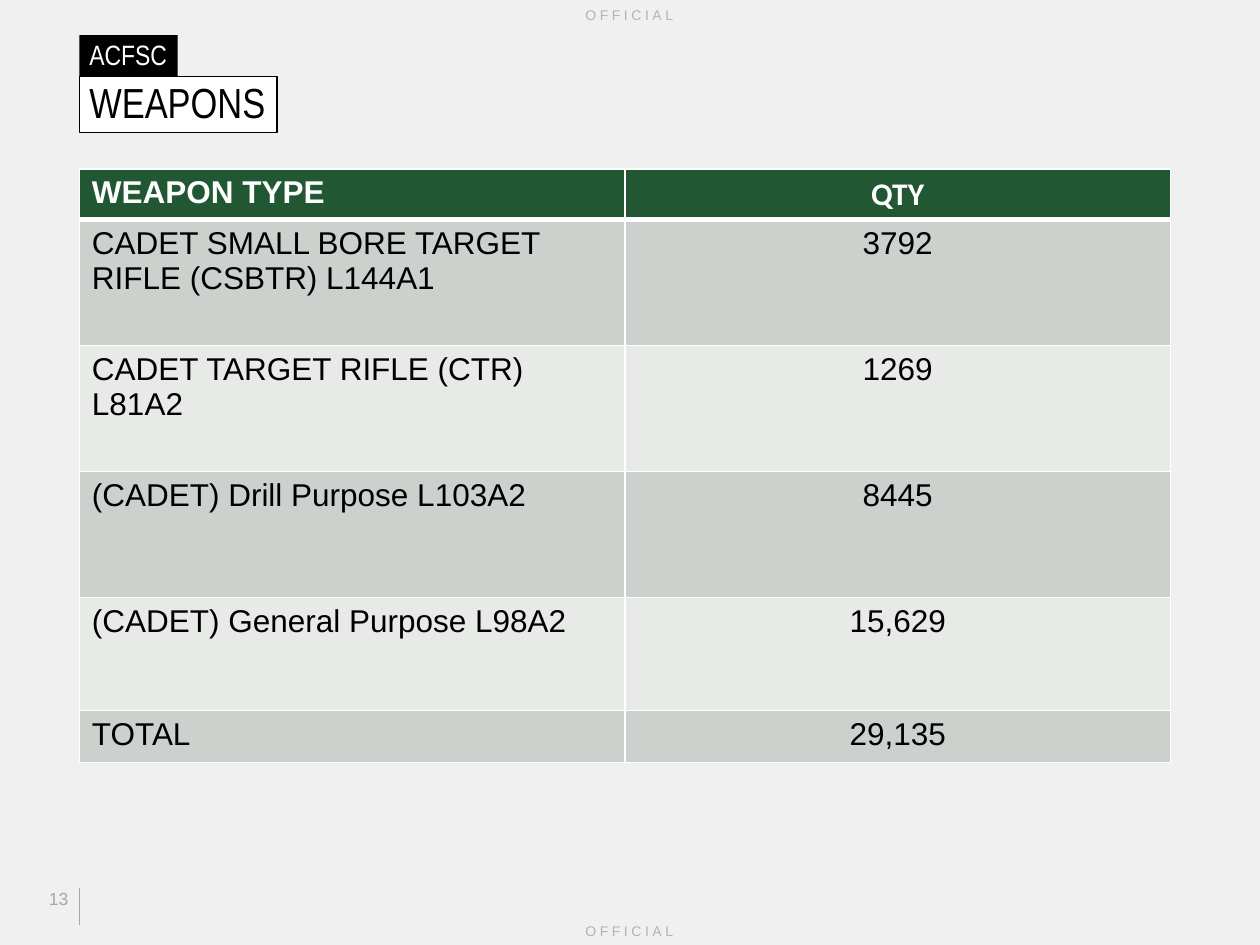
from lxml import etree
from pptx import Presentation
from pptx.dml.color import RGBColor
from pptx.enum import shapes, text
from pptx.oxml.ns import qn
from pptx.util import Inches, Pt

# Content
MARKING = "OFFICIAL"
HEADING, SUBHEADING, PAGE_NUMBER = "ACFSC", "WEAPONS", "13"
ROWS = [
    ("WEAPON TYPE", "QTY"),
    ("CADET SMALL BORE TARGET RIFLE (CSBTR) L144A1", "3792"),
    ("CADET TARGET RIFLE (CTR) L81A2", "1269"),
    ("(CADET) Drill Purpose L103A2", "8445"),
    ("(CADET) General Purpose L98A2", "15,629"),
    ("TOTAL", "29,135"),
]
ROW_HEIGHTS = [0.4, 1, 1, 1, 0.9, 0.41]

# Style and grid
PAPER = RGBColor(0xF0, 0xF0, 0xF0)
BLACK = RGBColor(0, 0, 0)
WHITE = RGBColor(255, 255, 255)
GREEN = RGBColor(0x21, 0x57, 0x32)
BANDS = [RGBColor(0xE8, 0xEA, 0xE8), RGBColor(0xCD, 0xD1, 0xCE)]
MARKING_GREY = RGBColor(0xB3, 0xB3, 0xB3)
FOOTER_GREY = RGBColor(0xA8, 0xA9, 0x9E)
WIDTH, HEIGHT = 10, 7.5
LEFT, TABLE_TOP, TABLE_WIDTH = 0.63, 1.34, 8.66
LEFT_ALIGN, CENTER, RIGHT = (
    text.PP_ALIGN.LEFT, text.PP_ALIGN.CENTER, text.PP_ALIGN.RIGHT)


def write(frame, words, size, color, font="Arial", align=LEFT_ALIGN, bold=False):
    para = frame.paragraphs[0]
    para.text = words
    para.alignment = align
    para.font.size, para.font.name, para.font.bold = Pt(size), font, bold
    para.font.color.rgb = color
    return para


def add_text(page, place, *style, **options):
    box = page.shapes.add_textbox(*map(Inches, place))
    box.text_frame.word_wrap = True
    return write(box.text_frame, *style, **options)


def add_label(page, place, words, size, fill, color, anchor, inset):
    box = page.shapes.add_shape(shapes.MSO_SHAPE.RECTANGLE, *map(Inches, place))
    box.shadow.inherit = False
    box.fill.solid()
    box.fill.fore_color.rgb = fill
    box.line.fill.background()
    frame = box.text_frame
    frame.word_wrap = False
    frame.vertical_anchor = anchor
    frame.margin_left = frame.margin_right = Inches(0.08)
    frame.margin_top = frame.margin_bottom = Inches(inset)
    write(frame, words, size, color, "Arial Narrow").line_spacing = 0.9
    return box


def set_borders(cell, bottom):
    props = cell._tc.get_or_add_tcPr()
    widths = {"a:lnL": 1, "a:lnR": 1, "a:lnT": 1, "a:lnB": bottom}
    for index, (side, points) in enumerate(widths.items()):
        line = etree.Element(qn(side), w=str(Pt(points)))
        fill = etree.SubElement(line, qn("a:solidFill"))
        etree.SubElement(fill, qn("a:srgbClr"), val=str(WHITE))
        props.insert(index, line)


def add_weapons_table(page):
    table = page.shapes.add_table(
        len(ROWS), 2, Inches(LEFT), Inches(TABLE_TOP),
        Inches(TABLE_WIDTH), Inches(sum(ROW_HEIGHTS))).table
    for column in table.columns:
        column.width = Inches(TABLE_WIDTH / 2)
    for r, (row, height) in enumerate(zip(ROWS, ROW_HEIGHTS)):
        table.rows[r].height = Inches(height)
        header = r == 0
        for c, words in enumerate(row):
            cell = table.cell(r, c)
            cell.fill.solid()
            cell.fill.fore_color.rgb = GREEN if header else BANDS[r % 2]
            set_borders(cell, bottom=3 if header else 1)
            write(cell.text_frame, words, 18, WHITE if header else BLACK,
                  font="Calibri" if header and c else "Arial",
                  align=CENTER if c else LEFT_ALIGN, bold=header)


def main():
    deck = Presentation()
    deck.slide_width, deck.slide_height = Inches(WIDTH), Inches(HEIGHT)
    page = deck.slides.add_slide(deck.slide_layouts[6])
    page.background.fill.solid()
    page.background.fill.fore_color.rgb = PAPER

    # Markings at foot and head
    for top in (7.27, 0):
        para = add_text(page, (3.81, top, 2.37, 0.24), MARKING, 8,
                        MARKING_GREY, align=CENTER)
        para.runs[0].font._element.set("spc", "200")

    # Footer rule and page number
    rule = page.shapes.add_connector(
        shapes.MSO_CONNECTOR.STRAIGHT,
        *map(Inches, (LEFT, 7.05, LEFT, 7.34)))
    rule.line.color.rgb = FOOTER_GREY
    rule.line.width = Pt(1)
    etree.SubElement(rule._element.spPr, qn("a:effectLst"))
    add_text(page, (0.24, 7, 0.4, 0.35), PAGE_NUMBER, 10, FOOTER_GREY, align=RIGHT)

    add_weapons_table(page)

    # Title labels
    add_label(page, (LEFT, 0.28, 0.78, 0.34), HEADING, 16, BLACK, WHITE,
              text.MSO_ANCHOR.BOTTOM, 0.05)
    label = add_label(page, (LEFT, 0.61, 1.57, 0.44), SUBHEADING, 24, WHITE, BLACK,
                      text.MSO_ANCHOR.MIDDLE, 0.04)
    label.line.color.rgb = BLACK
    label.line.width = Pt(0.75)

    deck.save("out.pptx")


if __name__ == "__main__":
    main()
